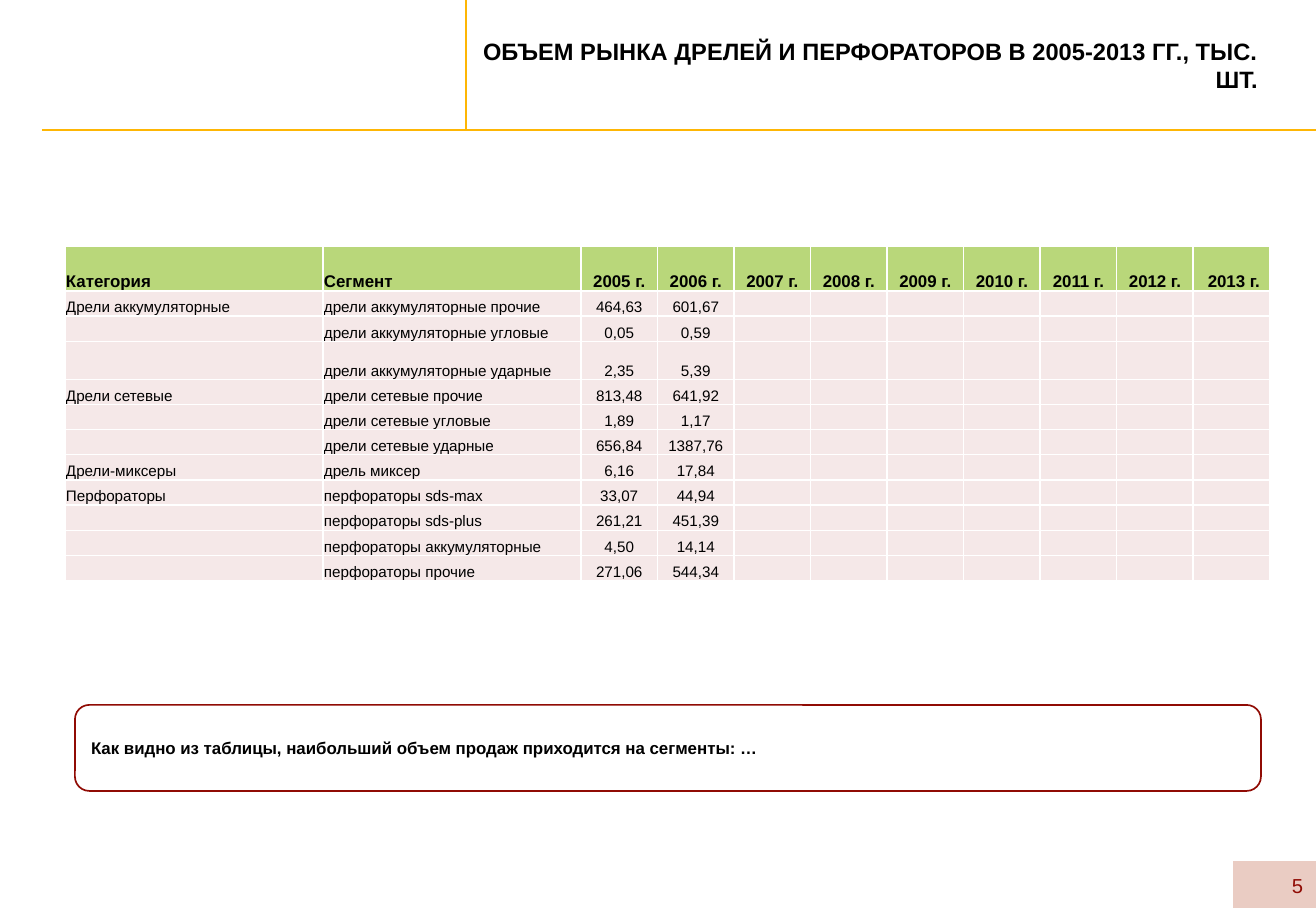
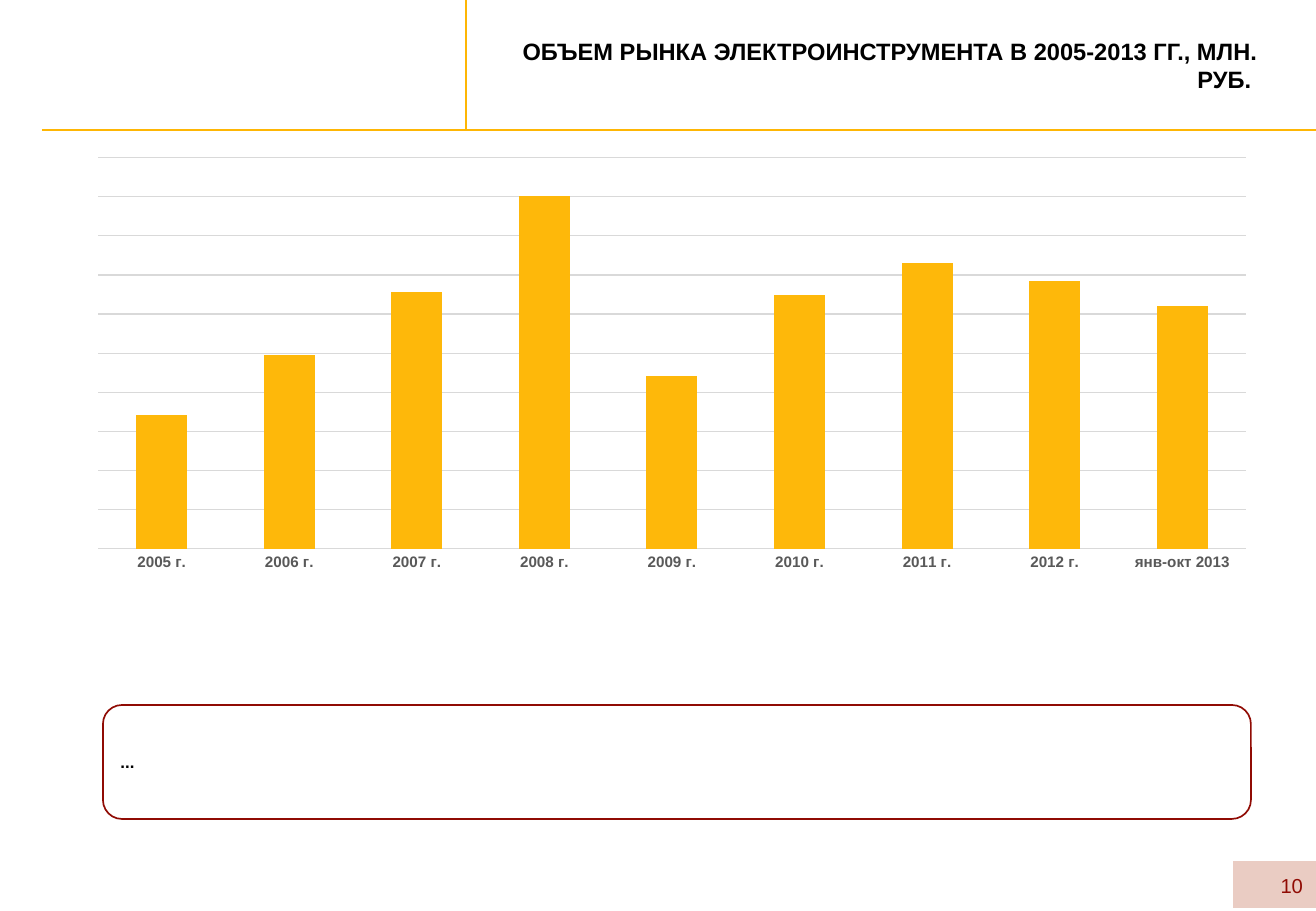
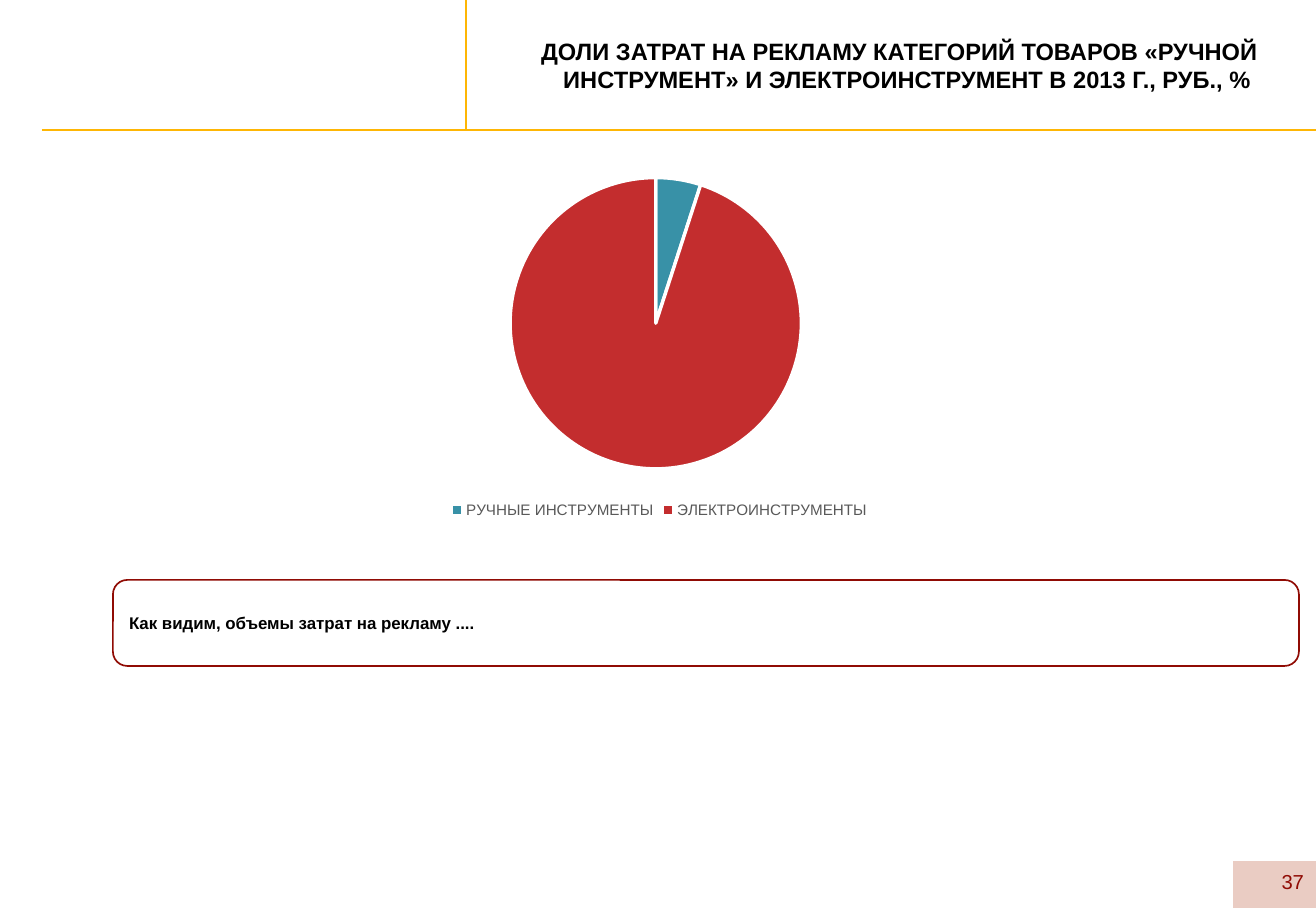
import pptx
import pptx.util
import pptx.chart.data
import pptx.dml.color
import pptx.enum.chart
import pptx.enum.shapes
import pptx.enum.text
import pptx.oxml
import pptx.oxml.ns
import lxml.etree

RGB = pptx.dml.color.RGBColor
BLACK = RGB(0x00, 0x00, 0x00)
WHITE = RGB(0xFF, 0xFF, 0xFF)
GREY = RGB(0x59, 0x59, 0x59)
PALE = RGB(0xD9, 0xD9, 0xD9)
GOLD = RGB(0xFE, 0xB6, 0x04)
AMBER = RGB(0xFE, 0xB8, 0x0A)
WINE = RGB(0x90, 0x0B, 0x04)
PINK = RGB(0xEA, 0xCC, 0xC3)
GREEN = RGB(0xB9, 0xD7, 0x7A)
BLUSH = RGB(0xF5, 0xE8, 0xE8)
TEAL = RGB(0x38, 0x91, 0xA7)
RED = RGB(0xC3, 0x2D, 0x2E)

PX = 7526
Pt = pptx.util.Pt
ALIGN = pptx.enum.text.PP_ALIGN
ANCHOR = pptx.enum.text.MSO_ANCHOR
SHAPE = pptx.enum.shapes.MSO_SHAPE
KIND = pptx.enum.chart.XL_CHART_TYPE
qn = pptx.oxml.ns.qn

HEAD = {"name": "Arial", "size": Pt(14), "bold": True, "color": BLACK}
NOTE = {"name": "Arial", "size": Pt(10), "bold": True, "color": BLACK}
CELL = {"name": "Arial", "size": Pt(9), "bold": False, "color": BLACK}
PAGE = {"name": "Arial", "size": Pt(12), "bold": False, "color": WINE}
AXIS = {"name": "Arial", "size": Pt(9), "bold": True, "color": GREY}
KEY = {"name": "Arial", "size": Pt(9), "bold": False, "color": GREY}


def style(font, form):
    for key, value in form.items():
        if key == "color":
            font.color.rgb = value
        else:
            setattr(font, key, value)


def write(frame, text, form, align, anchor=ANCHOR.MIDDLE):
    frame.word_wrap = True
    frame.vertical_anchor = anchor
    par = frame.paragraphs[0]
    par.alignment = align
    run = par.add_run()
    run.text = text
    style(run.font, form)


deck = pptx.Presentation()
deck.slide_width = 1316 * PX
deck.slide_height = 911 * PX

pages = [
    ("ОБЪЕМ РЫНКА ДРЕЛЕЙ И ПЕРФОРАТОРОВ В 2005-2013 ГГ., ТЫС. ШТ.",
     "5", (1008, 861),
     "Как видно из таблицы, наибольший объем продаж приходится на сегменты: …",
     (75, 705, 1186, 86)),
    ("ОБЪЕМ РЫНКА ЭЛЕКТРОИНСТРУМЕНТА В 2005-2013 ГГ., МЛН. РУБ. ",
     "10", (1008, 861), "...", (103, 705, 1148, 114)),
    ("ДОЛИ ЗАТРАТ НА РЕКЛАМУ КАТЕГОРИЙ ТОВАРОВ «РУЧНОЙ ИНСТРУМЕНТ» "
     "И ЭЛЕКТРОИНСТРУМЕНТ В 2013 Г., РУБ., % ",
     "37", (1009, 857), "Как видим, объемы затрат на рекламу ....",
     (113, 580, 1186, 86)),
]
rules = [((42, 130, 1316, 130), 1), ((466, 130, 466, 0), 0.75)]
slides = []

for head, num, spot, note, box in pages:
    slide = deck.slides.add_slide(deck.slide_layouts[5])
    slides.append(slide)

    band = slide.shapes.add_shape(
        SHAPE.RECTANGLE, *[n * PX for n in (1233, 861, 83, 47)])
    band.shadow.inherit = False
    band.fill.solid()
    band.fill.fore_color.rgb = PINK
    band.line.fill.background()

    for ends, width in rules:
        rule = slide.shapes.add_connector(
            pptx.enum.shapes.MSO_CONNECTOR.STRAIGHT, *[n * PX for n in ends])
        rule.line.color.rgb = GOLD
        rule.line.width = Pt(width)
        lxml.etree.SubElement(rule._element.spPr, qn("a:effectLst"))

    left, top = spot
    page = slide.shapes.add_textbox(left * PX, top * PX, 307 * PX, 49 * PX)
    write(page.text_frame, num, PAGE, ALIGN.RIGHT)

    title = slide.shapes.title
    place = {"left": 466, "top": 0, "width": 804, "height": 130}
    for key, value in place.items():
        setattr(title, key, value * PX)
    write(title.text_frame, head, HEAD, ALIGN.RIGHT)

    frame = slide.shapes.add_shape(
        SHAPE.ROUNDED_RECTANGLE, *[n * PX for n in box])
    frame.shadow.inherit = False
    frame.fill.background()
    frame.line.color.rgb = WINE
    frame.line.width = Pt(1)
    write(frame.text_frame, note, NOTE, ALIGN.JUSTIFY)

years = [f"{year} г." for year in range(2005, 2013)]
rows = [
    ["Категория", "Сегмент", *years, " 2013 г."],
    ["Дрели аккумуляторные", "дрели аккумуляторные прочие", "464,63", "601,67"],
    ["", "дрели аккумуляторные угловые", "0,05", "0,59"],
    ["", "дрели аккумуляторные ударные", "2,35", "5,39"],
    ["Дрели сетевые", "дрели сетевые прочие", "813,48", "641,92"],
    ["", "дрели сетевые угловые", "1,89", "1,17"],
    ["", "дрели сетевые ударные", "656,84", "1387,76"],
    ["Дрели-миксеры", "дрель миксер", "6,16", "17,84"],
    ["Перфораторы", "перфораторы sds-max", "33,07", "44,94"],
    ["", "перфораторы sds-plus", "261,21", "451,39"],
    ["", "перфораторы аккумуляторные", "4,50", "14,14"],
    ["", "перфораторы прочие", "271,06", "544,34"],
]
count = len(rows[0])
table = slides[0].shapes.add_table(
    len(rows), count, *[n * PX for n in (65, 246, 1205, 335)]).table
table.first_row = False
table.horz_banding = False
for c, col in enumerate(table.columns):
    col.width = 258 * PX if c < 2 else 689 * PX // (count - 2)
for r, row in enumerate(table.rows):
    row.height = {0: 45 * PX, 3: 38 * PX}.get(r, 252 * PX // 10)

pad = {"margin_left": PX, "margin_right": PX, "margin_top": PX, "margin_bottom": 0}
for r, texts in enumerate(rows):
    for c in range(count):
        cell = table.cell(r, c)
        for key, value in pad.items():
            setattr(cell, key, value)
        cell.vertical_anchor = ANCHOR.BOTTOM
        props = cell._tc.get_or_add_tcPr()
        for side in ("lnL", "lnR", "lnT", "lnB"):
            edge = lxml.etree.SubElement(props, qn("a:" + side), w=str(Pt(1)))
            fill = lxml.etree.SubElement(edge, qn("a:solidFill"))
            lxml.etree.SubElement(fill, qn("a:srgbClr"), val=str(WHITE))
        cell.fill.solid()
        cell.fill.fore_color.rgb = BLUSH if r else GREEN
        par = cell.text_frame.paragraphs[0]
        par.alignment = ALIGN.LEFT if c < 2 else ALIGN.CENTER
        if c < len(texts) and texts[c]:
            run = par.add_run()
            run.text = texts[c]
            style(run.font, CELL if r else NOTE)
        else:
            lxml.etree.SubElement(par._p, qn("a:endParaRPr"), sz="900")

charts = [
    (slides[1], KIND.COLUMN_CLUSTERED, (74, 149, 1196, 430),
     [*years, "янв-окт 2013"], [38, 55, 73, 100, 49, 72, 81, 76, 69],
     {"x": 0.02, "y": 0.02, "w": 0.96, "h": 0.91}),
    (slides[2], KIND.PIE, (286, 159, 747, 365),
     ["РУЧНЫЕ ИНСТРУМЕНТЫ", "ЭЛЕКТРОИНСТРУМЕНТЫ"], [5, 95],
     {"x": 0.3, "y": 0.05, "w": 0.39, "h": 0.8}),
]
plots = []
for slide, kind, box, cats, vals, inner in charts:
    data = pptx.chart.data.CategoryChartData()
    data.categories = cats
    data.add_series("Series 1", vals)
    chart = slide.shapes.add_chart(kind, *[n * PX for n in box], data).chart
    chart.has_title = False
    chart.has_legend = False
    style(chart.font, {"name": "Arial", "size": Pt(10), "color": BLACK})
    area = chart._chartSpace.chart.plotArea
    for old in area.findall(qn("c:layout")):
        area.remove(old)
    lay = pptx.oxml.parse_xml(
        '<c:layout xmlns:c="http://schemas.openxmlformats.org/drawingml/2006/chart"/>')
    area.insert(0, lay)
    hand = lxml.etree.SubElement(lay, qn("c:manualLayout"))
    marks = {"layoutTarget": "inner", "xMode": "edge", "yMode": "edge", **inner}
    for key, value in marks.items():
        lxml.etree.SubElement(hand, qn("c:" + key), val=str(value))
    plots.append(chart)

bars, pie = plots
bars.plots[0].gap_width = 150
bars.plots[0].vary_by_categories = False
fill = bars.plots[0].series[0].format.fill
fill.solid()
fill.fore_color.rgb = AMBER
base = bars.category_axis
base.major_tick_mark = pptx.enum.chart.XL_TICK_MARK.NONE
base.format.line.fill.background()
style(base.tick_labels.font, AXIS)
scale = bars.value_axis
scale.visible = False
scale.minimum_scale = 0
scale.maximum_scale = 111
scale.major_unit = 11.1
scale.tick_labels.number_format = "0.0"
scale.tick_labels.number_format_is_linked = False
scale.has_major_gridlines = True
scale.major_gridlines.format.line.color.rgb = PALE
scale.major_gridlines.format.line.width = Pt(0.75)

pie.has_legend = True
pie.legend.position = pptx.enum.chart.XL_LEGEND_POSITION.BOTTOM
pie.legend.include_in_layout = False
style(pie.legend.font, KEY)
for i, color in enumerate((TEAL, RED)):
    slice = pie.plots[0].series[0].points[i].format
    slice.fill.solid()
    slice.fill.fore_color.rgb = color
    slice.line.color.rgb = WHITE
    slice.line.width = Pt(2)

deck.save("out.pptx")
